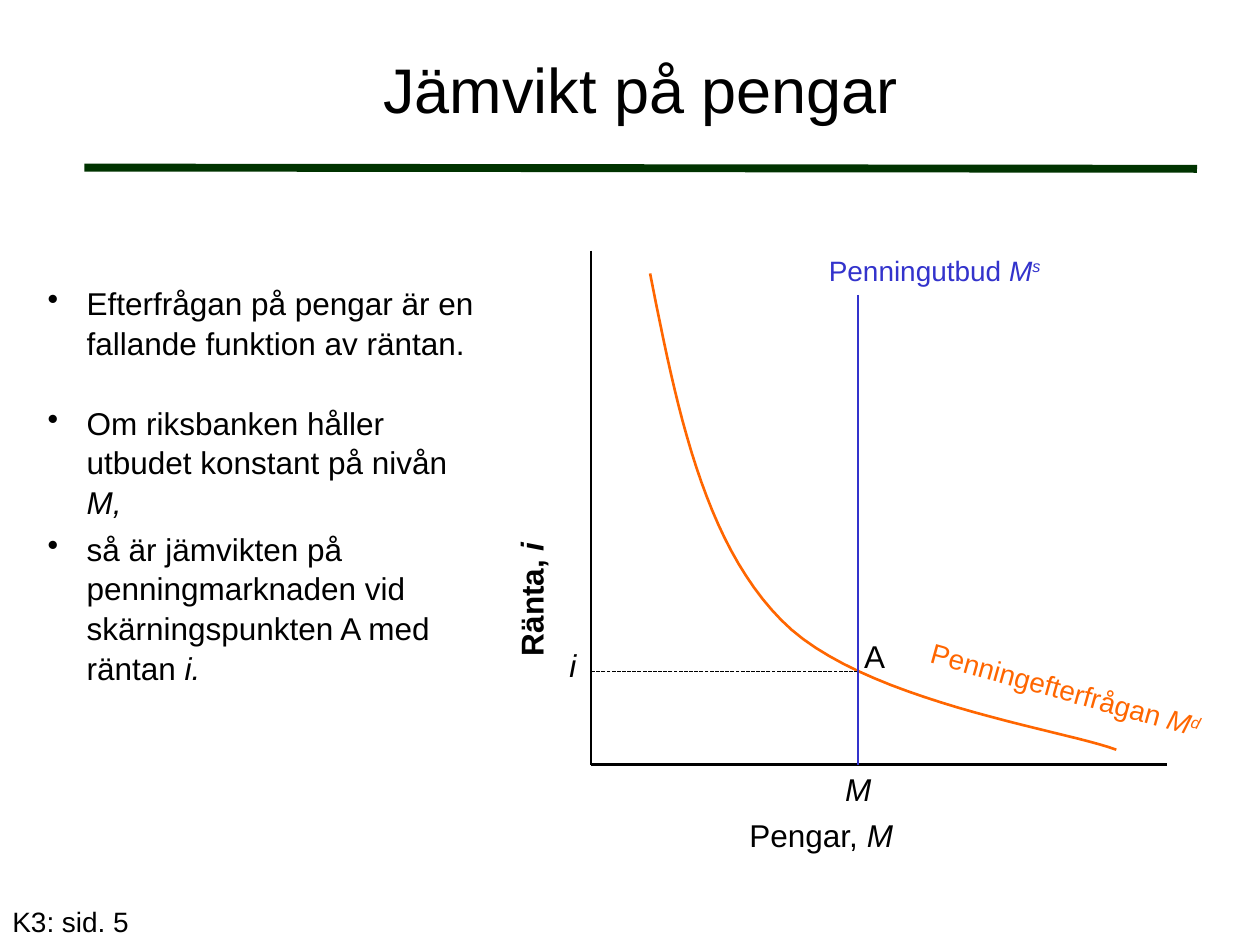
import dataclasses

import pptx
import pptx.dml.color
import pptx.enum.dml
import pptx.enum.shapes
import pptx.enum.text
import pptx.oxml
import pptx.oxml.ns
import pptx.util


@dataclasses.dataclass(frozen=True)
class Theme:
    font: str = "Arial"
    ink: str = "000000"
    paper: str = "FFFFFF"
    rule: str = "003300"
    demand: str = "FF6600"
    supply: str = "3333CC"
    title_size: int = 36
    body_size: int = 18
    label_size: int = 16
    line_width: float = 1.5


THEME = Theme()
inch = pptx.util.Inches

# The diagram's coordinate system
AXIS_X, AXIS_Y = 4.69, 6.07
AXIS_TOP, AXIS_RIGHT = 1.99, 9.26
EQUILIBRIUM_X, EQUILIBRIUM_Y = 6.81, 5.33
DEMAND_CURVE = [
    [(5.16, 2.17), (5.37, 3.23), (5.58, 4.29), (6.2, 4.92)],
    [(6.2, 4.92), (6.82, 5.56), (8.43, 5.79), (8.86, 5.95)],
]

BULLETS = [
    (2.19, 0.77, [("Efterfrågan på pengar är en fallande funktion av räntan.", "")]),
    (3.14, 0.77, [("Om riksbanken håller utbudet konstant på nivån ", ""), ("M,", "i")]),
    (4.14, 1.34, [("så är jämvikten på penningmarknaden vid "
                   "skärningspunkten A med räntan ", ""), ("i.", "i")]),
]


def rgb(colour):
    return pptx.dml.color.RGBColor.from_string(colour)


def add_runs(paragraph, runs, size, colour=THEME.ink):
    """Each run is (text, style); style letters: b bold, i italic, s superscript."""
    for text, style in runs:
        run = paragraph.add_run()
        run.text = text
        run.font.name = THEME.font
        run.font.size = pptx.util.Pt(size)
        run.font.color.rgb = rgb(colour)
        run.font.bold = "b" in style
        run.font.italic = "i" in style
        if "s" in style:
            run.font._element.set("baseline", "30000")


def add_label(slide, box, runs, size=THEME.body_size, colour=THEME.ink,
              rotation=0, filled=False, wrap=True):
    label = slide.shapes.add_textbox(*map(inch, box))
    label.rotation = rotation
    if filled:
        label.fill.solid()
        label.fill.fore_color.rgb = rgb(THEME.paper)
    label.text_frame.word_wrap = wrap
    paragraph = label.text_frame.paragraphs[0]
    add_runs(paragraph, runs, size, colour)
    return paragraph


def add_bullet(slide, top, height, runs):
    paragraph = add_label(slide, (0.28, top, 3.67, height), runs)
    paragraph.line_spacing = 1.05
    paragraph.space_before = paragraph.space_after = pptx.util.Pt(2.5)
    properties = paragraph._p.get_or_add_pPr()
    properties.set("marL", str(inch(0.31)))
    properties.set("indent", str(-inch(0.31)))
    bullet = pptx.oxml.parse_xml(
        f'<a:buChar {pptx.oxml.ns.nsdecls("a")} char="•"/>')
    properties.append(bullet)


def add_line(slide, start, end, colour=THEME.ink, width=THEME.line_width, dash=None):
    line = slide.shapes.add_connector(
        pptx.enum.shapes.MSO_CONNECTOR.STRAIGHT, *map(inch, (*start, *end)))
    line.line.color.rgb = rgb(colour)
    line.line.width = pptx.util.Pt(width)
    if dash:
        line.line.dash_style = dash
    line._element.spPr.append(
        pptx.oxml.parse_xml(f'<a:effectLst {pptx.oxml.ns.nsdecls("a")}/>'))


def bezier_points(controls, steps=24):
    """Points along a cubic Bézier segment, without its start point."""
    for step in range(1, steps + 1):
        t = step / steps
        weights = ((1 - t) ** 3, 3 * t * (1 - t) ** 2, 3 * t * t * (1 - t), t ** 3)
        yield tuple(inch(sum(w * c for w, c in zip(weights, axis)))
                    for axis in zip(*controls))


def add_curve(slide, segments, colour):
    builder = slide.shapes.build_freeform(*map(inch, segments[0][0]))
    for controls in segments:
        builder.add_line_segments(bezier_points(controls), close=False)
    curve = builder.convert_to_shape()
    curve.shadow.inherit = False
    curve.fill.background()
    curve.line.color.rgb = rgb(colour)
    curve.line.width = pptx.util.Pt(THEME.line_width)


def add_title(slide, text):
    title = slide.shapes.title
    title.left, title.top, title.width, title.height = map(
        inch, (0.67, 0.08, 8.83, 1.25))
    title.text_frame.vertical_anchor = pptx.enum.text.MSO_ANCHOR.MIDDLE
    paragraph = title.text_frame.paragraphs[0]
    paragraph.alignment = pptx.enum.text.PP_ALIGN.CENTER
    add_runs(paragraph, [(text, "")], THEME.title_size)
    add_line(slide, (0.67, 1.33), (9.5, 1.34), THEME.rule, 4.5)


def add_axes(slide):
    add_label(slide, (3.29, 4.18, 1.85, 0.4), [("Ränta, ", "b"), ("i", "bi")],
              rotation=270, filled=True)
    add_line(slide, (AXIS_X, AXIS_TOP), (AXIS_X, AXIS_Y))
    add_line(slide, (AXIS_RIGHT, AXIS_Y), (AXIS_X, AXIS_Y))
    add_label(slide, (5.85, 6.43, 2.77, 0.41), [("Pengar, ", ""), ("M", "i")],
              filled=True)


def add_demand(slide):
    add_label(slide, (7.25, 5.34, 2.77, 0.37),
              [("Penningefterfrågan ", ""), ("M", "i"), ("d", "is")],
              THEME.label_size, THEME.demand, rotation=15.6, filled=True)
    add_curve(slide, DEMAND_CURVE, THEME.demand)


def add_equilibrium(slide):
    add_label(slide, (6.76, 5.01, 0.37, 0.4), [("A", "")], wrap=False)
    add_line(slide, (EQUILIBRIUM_X, EQUILIBRIUM_Y), (AXIS_X, EQUILIBRIUM_Y),
             width=0.75, dash=pptx.enum.dml.MSO_LINE.SQUARE_DOT)
    add_label(slide, (4.42, 5.08, 0.26, 0.4), [("i", "i")], wrap=False)


def add_supply(slide):
    add_label(slide, (6.48, 1.96, 2.15, 0.37),
              [("Penningutbud ", ""), ("M", "i"), ("s", "is")],
              THEME.label_size, THEME.supply, filled=True)
    add_line(slide, (EQUILIBRIUM_X, 2.34), (EQUILIBRIUM_X, AXIS_Y), THEME.supply)
    add_label(slide, (6.61, 6.06, 0.41, 0.4), [("M", "i")], wrap=False)


def main():
    deck = pptx.Presentation()
    deck.slide_width, deck.slide_height = inch(10), inch(7.5)
    slide = deck.slides.add_slide(deck.slide_layouts.get_by_name("Title Only"))
    add_title(slide, "Jämvikt på pengar")
    add_axes(slide)
    add_demand(slide)
    add_equilibrium(slide)
    add_supply(slide)
    for top, height, runs in BULLETS:
        add_bullet(slide, top, height, runs)
    add_label(slide, (0, 7.13, 2.08, 0.37), [("K3: sid. 5", "")], THEME.label_size)
    deck.save("out.pptx")


if __name__ == "__main__":
    main()
